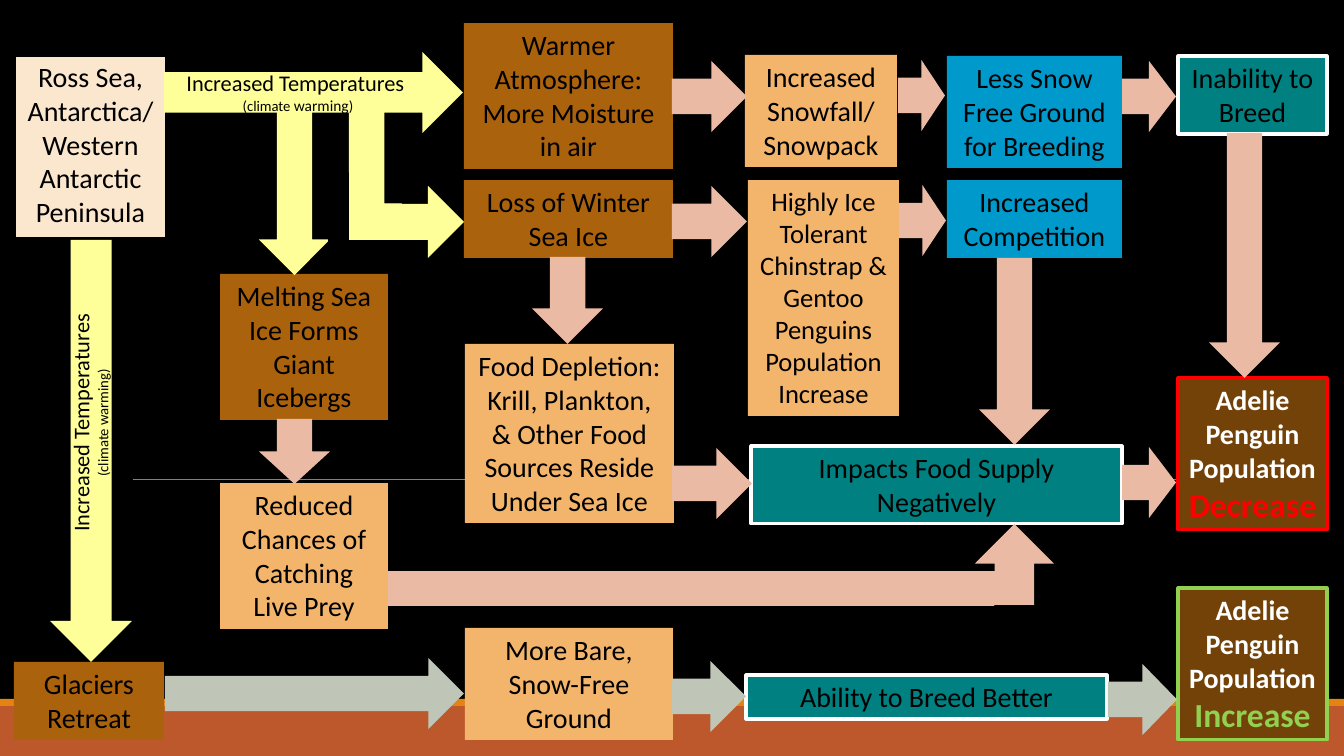
from pptx import Presentation
from pptx.dml.color import RGBColor
from pptx.enum.shapes import MSO_CONNECTOR, MSO_SHAPE
from pptx.enum.text import MSO_ANCHOR, MSO_AUTO_SIZE, PP_ALIGN
from pptx.oxml.ns import qn
from pptx.util import Emu, Pt
from lxml import etree

RECTANGLE = MSO_SHAPE.RECTANGLE
RIGHT_ARROW = MSO_SHAPE.RIGHT_ARROW
STRAIGHT = MSO_CONNECTOR.STRAIGHT
TOP = MSO_ANCHOR.TOP
GROW = MSO_AUTO_SIZE.SHAPE_TO_FIT_TEXT
CENTER = PP_ALIGN.CENTER

EMU_PER_PX = 12192000 / 1344
SLIDE_WIDTH, SLIDE_HEIGHT = 1344, 756
FONT = "Calibri"
RIGHT, DOWN, UP = 0, 90, 270

COLOURS = {
    "black": "000000",
    "white": "FFFFFF",
    "rust": "BD582C",
    "orange": "E48312",
    "grey": "808080",
    "cream": "FBE6CE",
    "yellow": "FFFF99",
    "brown": "AB620D",
    "dark brown": "724209",
    "peach": "F3B56C",
    "pink": "EABAA5",
    "blue": "0099CC",
    "teal": "008080",
    "sage": "BFC6B8",
    "red": "FF0000",
    "green": "92D050",
}

CAUSES_AND_EFFECTS = [
    ("Ross Sea, Antarctica/Western Antarctic Peninsula", "cream", "black", (14, 55, 153, 184)),
    ("Warmer Atmosphere: More Moisture in air", "brown", None, (464, 23, 209, 146)),
    ("Loss of Winter Sea Ice", "brown", None, (464, 180, 209, 78)),
    ("Melting Sea Ice Forms Giant Icebergs", "brown", None, (220, 274, 168, 146)),
    ("Glaciers Retreat", "brown", None, (14, 662, 150, 78)),
    ("Increased Snowfall/ Snowpack", "peach", None, (745, 55, 152, 112)),
    ("Food Depletion: Krill, Plankton, & Other Food Sources Reside Under Sea Ice",
     "peach", None, (465, 344, 209, 179)),
    ("Reduced Chances of Catching Live Prey", "peach", None, (220, 483, 168, 146)),
    ("More Bare, Snow-Free Ground", "peach", None, (465, 628, 208, 112)),
    ("Less Snow Free Ground for Breeding", "blue", None, (947, 56, 175, 112)),
    ("Increased Competition", "blue", None, (947, 180, 175, 78)),
    ("Inability to Breed", "teal", "white", (1178, 56, 149, 78)),
    ("Impacts Food Supply Negatively", "teal", "white", (751, 446, 371, 78)),
    ("Ability to Breed Better", "teal", "white", (746, 675, 361, 44)),
]

OUTCOMES = [("Decrease", "red", 378), ("Increase", "green", 588)]

ARROWS = [
    ("yellow", RIGHT, (164, 52, 299, 81)),
    ("yellow", DOWN, (331, 111, 71, 128)),
    ("yellow", RIGHT, (330, 186, 134, 72)),
    ("yellow", DOWN, (259, 111, 71, 164)),
    ("yellow", DOWN, (50, 240, 82, 422)),
    ("pink", RIGHT, (672, 61, 75, 71)),
    ("pink", RIGHT, (672, 186, 75, 71)),
    ("pink", RIGHT, (672, 448, 80, 71)),
    ("pink", RIGHT, (898, 60, 47, 71)),
    ("pink", RIGHT, (899, 185, 47, 71)),
    ("pink", RIGHT, (1122, 61, 54, 71)),
    ("pink", RIGHT, (1122, 447, 54, 71)),
    ("pink", DOWN, (1209, 133, 71, 245)),
    ("pink", DOWN, (979, 258, 71, 187)),
    ("pink", DOWN, (532, 257, 71, 87)),
    ("pink", DOWN, (259, 419, 71, 65)),
    ("pink", RIGHT, (388, 554, 646, 69)),
    ("pink", UP, (975, 524, 79, 89)),
    ("sage", RIGHT, (165, 658, 299, 71)),
    ("sage", RIGHT, (672, 661, 74, 71)),
    ("sage", RIGHT, (1108, 664, 69, 71)),
]

ARROW_CORNERS = [(329, 173, 19, 74), (995, 606, 73, 54)]


def px(length):
    return Emu(round(length * EMU_PER_PX))


def rgb(colour):
    return RGBColor.from_string(COLOURS[colour])


def unrotated(bounds, rotation):
    left, top, width, height = bounds
    if rotation in (DOWN, UP):
        shift = (width - height) / 2
        left, top, width, height = left + shift, top - shift, height, width
    return [px(length) for length in (left, top, width, height)]


def add_block(slide, kind, bounds, fill, outline=None, weight=2.25, rotation=RIGHT):
    block = slide.shapes.add_shape(kind, *unrotated(bounds, rotation))
    block.rotation = rotation
    block.shadow.inherit = False
    block.fill.solid()
    block.fill.fore_color.rgb = rgb(fill)
    if outline:
        block.line.color.rgb = rgb(outline)
        block.line.width = Pt(weight)
    else:
        block.line.fill.background()
    return block


def write(holder, paragraphs):
    frame = holder.text_frame
    frame.word_wrap = True
    frame.auto_size = GROW
    frame.vertical_anchor = TOP
    for index, runs in enumerate(paragraphs):
        paragraph = frame.add_paragraph() if index else frame.paragraphs[0]
        paragraph.alignment = CENTER
        for words, size, colour, bold in runs:
            run = paragraph.add_run()
            run.text = words
            run.font.name = FONT
            run.font.size = Pt(size)
            run.font.bold = bold
            run.font.color.rgb = rgb(colour)


def add_caption(slide, bounds, paragraphs, rotation=RIGHT):
    caption = slide.shapes.add_textbox(*unrotated(bounds, rotation))
    caption.rotation = rotation
    write(caption, paragraphs)


def add_backdrop(slide):
    slide.background.fill.solid()
    slide.background.fill.fore_color.rgb = rgb("black")
    add_block(slide, RECTANGLE, (0, 706, SLIDE_WIDTH, 50), "rust")
    add_block(slide, RECTANGLE, (0, 699, SLIDE_WIDTH, 7), "orange")
    rule = slide.shapes.add_connector(STRAIGHT, px(133), px(479), px(1222), px(479))
    rule.line.color.rgb = rgb("grey")
    rule.line.width = Pt(0.5)
    etree.SubElement(rule._element.spPr, qn("a:effectLst"))


def main():
    deck = Presentation()
    deck.slide_width, deck.slide_height = px(SLIDE_WIDTH), px(SLIDE_HEIGHT)
    slide = deck.slides.add_slide(deck.slide_layouts[6])
    add_backdrop(slide)

    for words, fill, outline, bounds in CAUSES_AND_EFFECTS:
        step = add_block(slide, RECTANGLE, bounds, fill, outline)
        size = 20
        write(step, [[(words, size, "black", False)]])

    chinstraps = add_block(slide, RECTANGLE, (748, 180, 151, 236), "peach")
    write(chinstraps, [[("Highly Ice Tolerant Chinstrap & Gentoo Penguins Population Increase",
                         19, "black", False)]])

    for change, accent, top in OUTCOMES:
        outcome = add_block(slide, RECTANGLE, (1178, top, 149, 152), "dark brown", accent)
        write(outcome, [[("Adelie Penguin Population ", 20, "white", True),
                         (change, 24, accent, True)]])

    for fill, direction, bounds in ARROWS:
        add_block(slide, RIGHT_ARROW, bounds, fill, rotation=direction)
    for bounds in ARROW_CORNERS:
        add_block(slide, RECTANGLE, bounds, "black", "black", 1.25)

    warming = ("Increased Temperatures ", 16, "black", False)
    add_caption(slide, (157, 64, 282, 56), [
        [warming],
        [("(climate ", 10.5, "black", False), ("warming", 11, "black", False),
         (")", 10.5, "black", False)],
    ])
    add_caption(slide, (62, 282, 55, 282),
                [[warming, ("(climate warming)", 10.5, "black", False)]], UP)

    deck.save("out.pptx")


if __name__ == "__main__":
    main()
